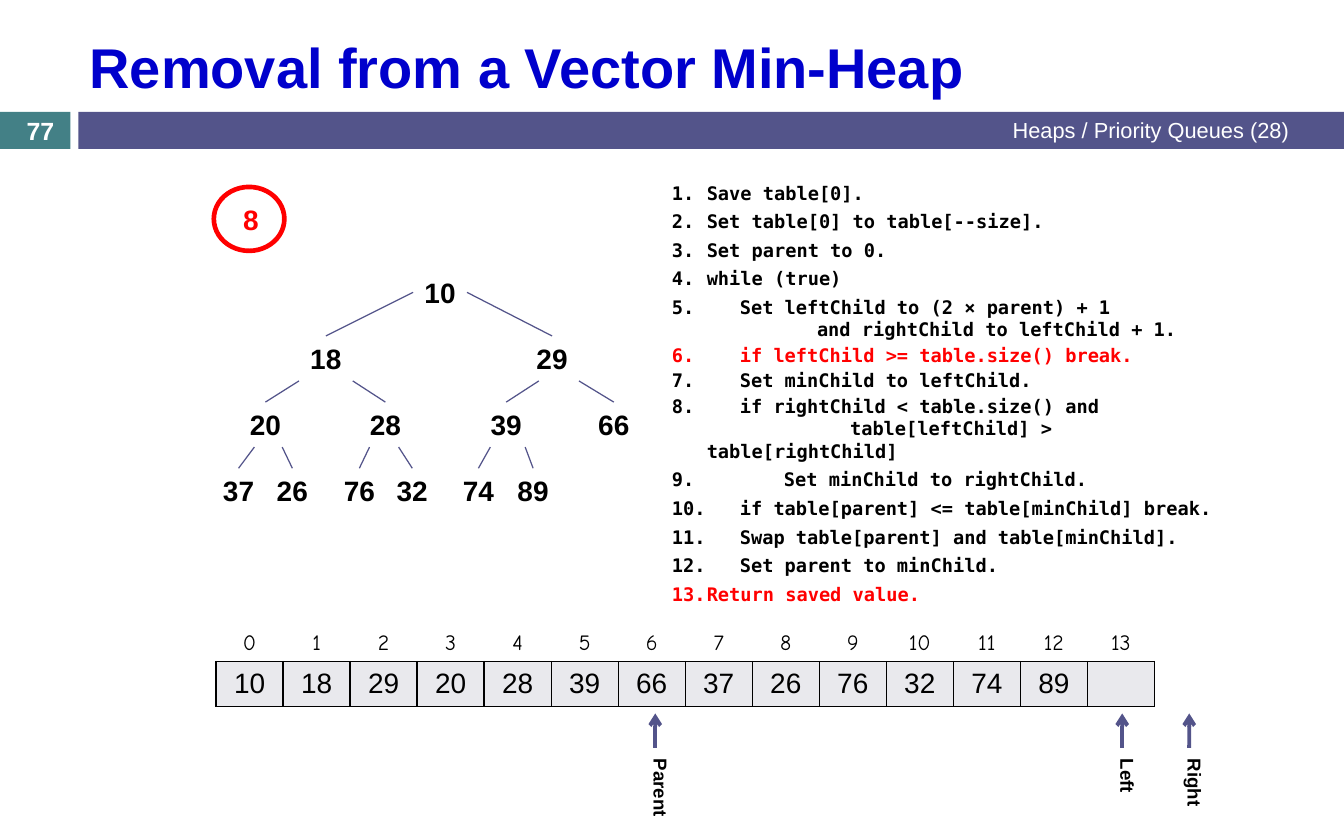
from lxml.etree import SubElement
from pptx import Presentation
from pptx.dml.color import RGBColor
from pptx.enum.shapes import MSO_CONNECTOR as CONN, MSO_SHAPE as SHAPE
from pptx.enum.text import MSO_ANCHOR as ANCHOR, PP_ALIGN as ALIGN
from pptx.oxml.ns import qn
from pptx.util import Cm, Pt

HEAP = [10, 18, 29, 20, 28, 39, 66, 37, 26, 76, 32, 74, 89]
NODE_X = [9.98, 7.39, 12.52, 6.02, 8.74, 11.48, 13.92,
          5.41, 6.63, 8.15, 9.35, 10.85, 12.09]
EDGE_DX = [0, 0, 0, -0.61, 0.61, -0.3, 0.61,
           -0.25, 0.38, -0.36, 0.3, -0.36, 0.43]
NODE_W, NODE_H = 1.22, 1.02
TOP_Y, LEVEL_GAP = 6.63, 1.5
CELL_W, CELL_H = 1.52, 1.03
NUMBER_W, CHAR_W = 0.79, 0.25

STEPS = [
    (1, 0, 0, "Save table[0]."),
    (2, 0, 4, "Set table[0] to table[--size]."),
    (3, 0, 4, "Set parent to 0."),
    (4, 0, 4, "while (true)"),
    (5, 3, 4, "Set leftChild to (2 × parent) + 1"),
    (None, 10, 0, "and rightChild to leftChild + 1."),
    (6, 3, 2, "if leftChild >= table.size() break."),
    (7, 3, 2, "Set minChild to leftChild."),
    (8, 3, 2, "if rightChild < table.size() and"),
    (None, 13, 0, "table[leftChild] > table[rightChild]"),
    (9, 7, 4, "Set minChild to rightChild."),
    (10, 3, 4, "if table[parent] <= table[minChild] break."),
    (11, 3, 4, "Swap table[parent] and table[minChild]."),
    (12, 3, 4, "Set parent to minChild."),
    (13, 0, 4, "Return saved value."),
]
RED_STEPS = (6, 13)
POINTERS = [("Parent", 14.86, 1.57), ("Left", 25.45, 1.04), ("Right", 26.97, 1.35)]


def rgb(value):
    return RGBColor.from_string(value)


class Deck:
    BLUE, TEAL, PURPLE, RED = "0000CC", "438086", "53548A", "FF0000"
    BLACK, WHITE, GREY = "000000", "FFFFFF", "E9E9ED"

    def __init__(self, prs):
        self.s = prs.slides.add_slide(prs.slide_layouts[6])

    def run(self, p, text, color=BLACK, align=ALIGN.LEFT, **fmt):
        p.alignment = align
        r = p.add_run()
        r.text = text
        for key, value in {"name": "Arial", "size": Pt(18), **fmt}.items():
            setattr(r.font, key, value)
        r.font.color.rgb = rgb(color)

    def shape(self, kind, x, y, w, h, fill, line=None):
        sp = self.s.shapes.add_shape(kind, Cm(x), Cm(y), Cm(w), Cm(h))
        sp.shadow.inherit = False
        sp.fill.solid()
        sp.fill.fore_color.rgb = rgb(fill)
        if line:
            sp.line.color.rgb = rgb(line)
            sp.line.width = Pt(3)
        else:
            sp.line.fill.background()

    def text(self, x, y, w, h, text="", wrap=True, anchor=ANCHOR.MIDDLE, **fmt):
        sp = self.s.shapes.add_textbox(Cm(x), Cm(y), Cm(w), Cm(h))
        tf = sp.text_frame
        tf.word_wrap, tf.vertical_anchor = wrap, anchor
        if text:
            self.run(tf.paragraphs[0], text, **fmt)
        return sp

    def node(self, x, y, value, color=BLACK):
        return self.text(x - NODE_W / 2, y - NODE_H / 2, NODE_W, NODE_H, str(value),
                         wrap=False, anchor=ANCHOR.TOP, align=ALIGN.CENTER,
                         color=color, bold=True)

    def line(self, x, y, target, width, start=None, side=0, head=False):
        c = self.s.shapes.add_connector(CONN.STRAIGHT, Cm(x), Cm(y), Cm(x), Cm(y))
        if start is not None:
            c.begin_connect(start, side)
        c.end_connect(target, 0)
        c.line.color.rgb = rgb(self.PURPLE)
        c.line.width = Pt(width)
        spPr = c._element.spPr
        if head:
            SubElement(spPr.find(qn("a:ln")), qn("a:headEnd"), type="arrow")
        SubElement(spPr, qn("a:effectLst"))

    def pointer(self, label, x, h):
        sp = self.text(x - 0.51, 16.96, 1.02, h, label, wrap=False,
                       anchor=ANCHOR.TOP, size=Pt(12), bold=True)
        sp._element.txBody.find(qn("a:bodyPr")).set("vert", "vert")
        self.line(x, 16.18, sp, 2.5, head=True)

    def steps(self, x, y, w, h):
        tf = self.text(x, y, w, h, anchor=ANCHOR.TOP).text_frame
        for i, (number, chars, before, text) in enumerate(STEPS):
            p = tf.add_paragraph() if i else tf.paragraphs[0]
            p.space_before = Pt(before)
            pPr = p._p.get_or_add_pPr()
            if number:
                margin = Cm(NUMBER_W + chars * CHAR_W)
                indent = -margin
                SubElement(pPr, qn("a:buFont"), typeface="DejaVu Sans Mono")
                SubElement(pPr, qn("a:buAutoNum"), type="arabicPeriod", startAt=str(number))
            else:
                margin = Cm(NUMBER_W)
                indent = Cm(chars * CHAR_W)
                SubElement(pPr, qn("a:buNone"))
            pPr.set("marL", str(margin))
            pPr.set("indent", str(indent))
            self.run(p, text, self.RED if number in RED_STEPS else self.BLACK,
                     name="DejaVu Sans Mono", size=Pt(12), bold=True)

    def cell(self, cell, text, anchor, fill, borders, **fmt):
        cell.vertical_anchor = anchor
        self.run(cell.text_frame.paragraphs[0], text, align=ALIGN.CENTER, **fmt)
        tcPr = cell._tc.get_or_add_tcPr()
        for side, color in zip("LRTB", borders):
            ln = SubElement(tcPr, qn(f"a:ln{side}"), w=str(Pt(1)))
            SubElement(SubElement(ln, qn("a:solidFill")), qn("a:srgbClr"), val=color)
        cell.fill.solid()
        cell.fill.fore_color.rgb = rgb(fill)

    def array(self, x, y, values):
        n = len(values)
        t = self.s.shapes.add_table(2, n, Cm(x), Cm(y), Cm(n * CELL_W), Cm(2 * CELL_H)).table
        t.first_row = t.horz_banding = False
        for row in t.rows:
            row.height = Cm(CELL_H)
        for i, value in enumerate(values):
            t.columns[i].width = Cm(CELL_W)
            self.cell(t.cell(0, i), str(i), ANCHOR.BOTTOM, self.WHITE,
                      [self.WHITE] * 3 + [self.BLACK], name="Comic Neue", size=Pt(14))
            self.cell(t.cell(1, i), str(value), ANCHOR.MIDDLE, self.GREY, [self.BLACK] * 4)

    def tree(self):
        nodes = []
        for i, (value, x) in enumerate(zip(HEAP, NODE_X)):
            level = (i + 1).bit_length() - 1
            y = TOP_Y + level * LEVEL_GAP
            nodes.append(self.node(x, y, value))
            if not i:
                continue
            parent = (i - 1) // 2
            start_x = NODE_X[parent] + EDGE_DX[i]
            start_y = y - LEVEL_GAP + NODE_H / 2
            if parent:
                self.line(start_x, start_y, nodes[i], 0.79)
            else:
                self.line(start_x, start_y, nodes[i], 0.79, nodes[0], 1 if i == 1 else 3)


def main():
    prs = Presentation()
    prs.slide_width, prs.slide_height = Cm(30.48), Cm(19.05)
    d = Deck(prs)
    d.shape(SHAPE.RECTANGLE, 0, 2.54, 1.6, 0.84, d.TEAL)
    d.shape(SHAPE.RECTANGLE, 1.78, 2.54, 28.7, 0.84, d.PURPLE)
    d.shape(SHAPE.OVAL, 4.85, 4.24, 1.6, 1.45, d.WHITE, d.RED)
    d.text(11.43, 2.51, 18.06, 0.89, "Heaps / Priority Queues (28)",
           color=d.WHITE, align=ALIGN.RIGHT, size=Pt(14))
    d.text(0, 2.57, 1.83, 0.76, "77", color=d.WHITE, align=ALIGN.CENTER,
           size=Pt(16), bold=True)
    d.text(1.78, 0.48, 27.71, 2.03, "Removal from a Vector Min-Heap",
           color=d.BLUE, size=Pt(36), bold=True)
    d.array(4.9, 13.97, HEAP + [""])
    d.steps(14.99, 3.99, 12.83, 9.45)
    d.node(5.69, 4.98, 8, d.RED)
    d.tree()
    for label, x, h in POINTERS:
        d.pointer(label, x, h)
    prs.save("out.pptx")


if __name__ == "__main__":
    main()
